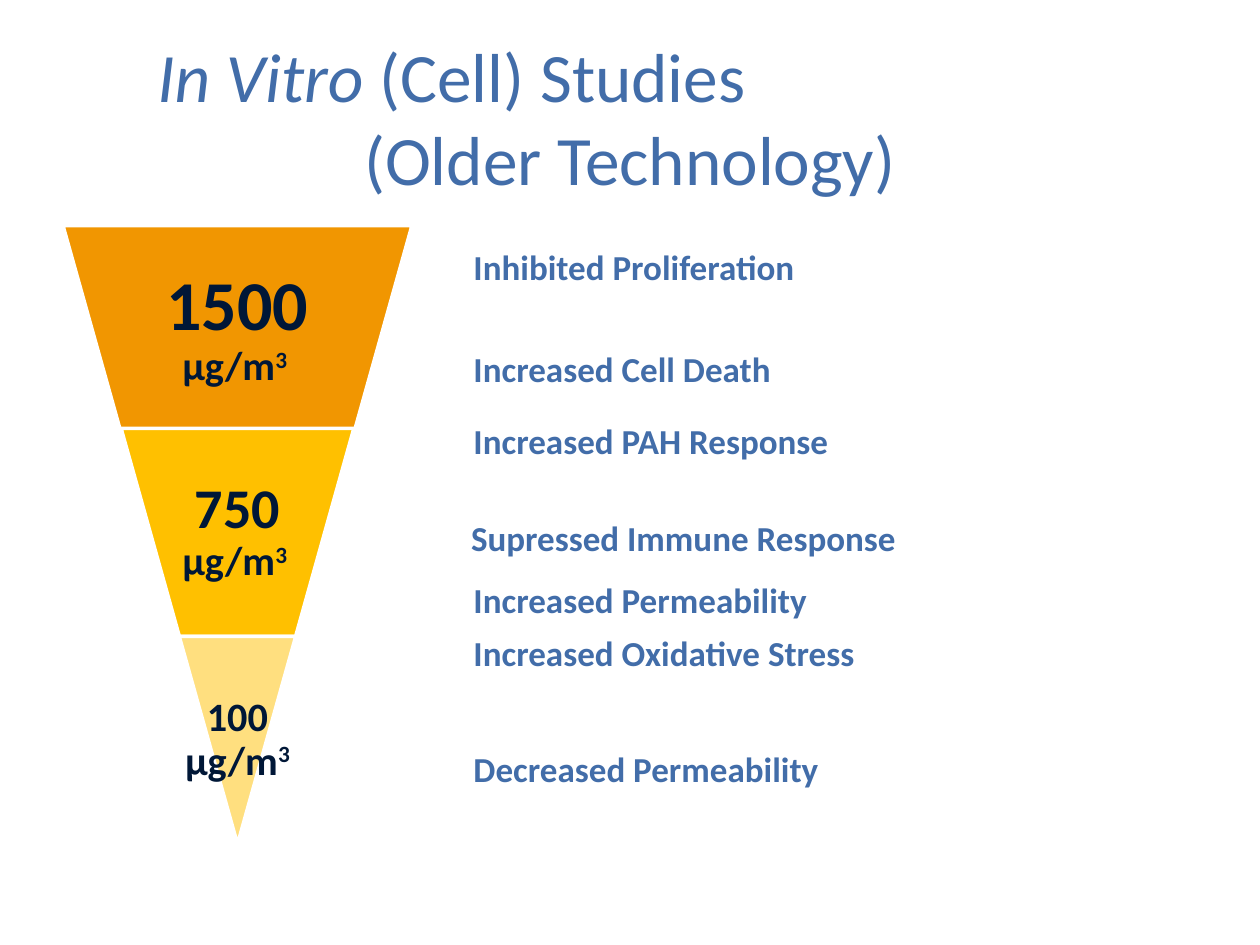
"""Build the slide on in vitro cell studies by exposure concentration."""
from lxml.etree import SubElement
from pptx import Presentation
from pptx.dml.color import RGBColor
from pptx.enum.shapes import MSO_SHAPE
from pptx.enum.text import MSO_ANCHOR, PP_ALIGN
from pptx.oxml.ns import qn
from pptx.util import Pt

THEME = {
    "font": "Calibri",
    "blue": RGBColor.from_string("426DA9"),
    "navy": RGBColor.from_string("001737"),
    "white": RGBColor.from_string("FFFFFF"),
    "orange": RGBColor.from_string("F19601"),
    "amber": RGBColor.from_string("FFC000"),
    "title_size": 39.6,
    "unit_size": 23,
    "effect_size": 20,
}

TITLE = [("In Vitro ", True), ("(Cell) Studies", False)]
SUBTITLE = "(Older Technology)"
# concentration, size, colour, opacity in percent, top, label width, inset, slope
TIERS = [
    ("1500", 40, "orange", 100, 128.9, 129.6, 4.3, 0.28),
    ("750", 32, "amber", 100, 244.8, 86.4, 2.9, 0.28),
    ("100", 23, "amber", 50, 363.6, 66.2, 2.2, 0.5),
]
EFFECTS = [
    ("Inhibited Proliferation", 263.5, 136.8),
    ("Increased Cell Death", 263.5, 195.1),
    ("Increased PAH Response", 263.5, 236.2),
    ("Supressed Immune Response", 262.1, 291.6),
    ("Increased Permeability", 263.5, 326.9),
    ("Increased Oxidative Stress", 263.5, 357.1),
    ("Decreased Permeability", 263.5, 423.4),
]

FUNNEL_LEFT, FUNNEL_WIDTH = 36, 199.4
TIER_HEIGHT, TIER_STEP = 118.8, 33.2
TITLE_INDENT = 46.8


def set_font(font, size, color, bold=False):
    font.name = THEME["font"]
    font.size = Pt(size)
    font.color.rgb = THEME[color]
    font.bold = bold


def add_title(slide):
    box = slide.shapes.add_textbox(Pt(36), Pt(21.6), Pt(648), Pt(90))
    frame = box.text_frame
    frame.word_wrap = True
    frame.vertical_anchor = MSO_ANCHOR.MIDDLE
    first, second = frame.paragraphs[0], frame.add_paragraph()
    first.alignment, second.alignment = PP_ALIGN.LEFT, PP_ALIGN.CENTER
    first._p.get_or_add_pPr().set("marL", str(Pt(TITLE_INDENT)))
    for words, italic in TITLE:
        run = first.add_run()
        run.text = words
        run.font.italic = italic
    second.text = SUBTITLE
    for line in (first, second):
        set_font(line.font, THEME["title_size"], "blue")


def add_tier(funnel, index, tier):
    amount, size, color, opacity, top, label_width, inset, slope = tier
    width = FUNNEL_WIDTH - 2 * TIER_STEP * index
    band = funnel.shapes.add_shape(
        MSO_SHAPE.TRAPEZOID, Pt(FUNNEL_LEFT + TIER_STEP * index), Pt(top),
        Pt(width), Pt(TIER_HEIGHT))
    band.rotation = 180
    band.adjustments[0] = slope
    band.shadow.inherit = False
    band.fill.solid()
    band.fill.fore_color.rgb = THEME[color]
    if opacity < 100:
        fill_color = band._element.spPr.find(qn("a:solidFill"))[0]
        SubElement(fill_color, qn("a:alpha"), val=str(opacity * 1000))
    band.line.color.rgb = THEME["white"]
    band.line.width = Pt(2)

    center = FUNNEL_LEFT + FUNNEL_WIDTH / 2
    label = funnel.shapes.add_textbox(
        Pt(center - label_width / 2), Pt(top), Pt(label_width), Pt(TIER_HEIGHT))
    frame = label.text_frame
    frame.word_wrap = True
    frame.vertical_anchor = MSO_ANCHOR.MIDDLE
    frame.margin_left = frame.margin_right = Pt(inset)
    frame.margin_top = frame.margin_bottom = Pt(inset)
    paragraph = frame.paragraphs[0]
    paragraph.alignment = PP_ALIGN.CENTER
    paragraph.line_spacing = 0.9
    unit_size = THEME["unit_size"]
    for words, run_size in ((amount, size), (" µg/m", unit_size), ("3 ", unit_size)):
        run = paragraph.add_run()
        run.text = words
        set_font(run.font, run_size, "navy", bold=True)
    run.font._element.set("baseline", "30000")


def add_effect(slide, effect, left, top):
    box = slide.shapes.add_textbox(Pt(left), Pt(top), Pt(260), Pt(31.7))
    box.text_frame.word_wrap = True
    paragraph = box.text_frame.paragraphs[0]
    paragraph.text = effect
    set_font(paragraph.font, THEME["effect_size"], "blue", bold=True)


def main():
    deck = Presentation()
    deck.slide_width, deck.slide_height = Pt(720), Pt(540)
    slide = deck.slides.add_slide(deck.slide_layouts[6])
    add_title(slide)
    funnel = slide.shapes.add_group_shape()
    for index, tier in enumerate(TIERS):
        add_tier(funnel, index, tier)
    for effect, left, top in EFFECTS:
        add_effect(slide, effect, left, top)
    deck.save("out.pptx")


if __name__ == "__main__":
    main()
